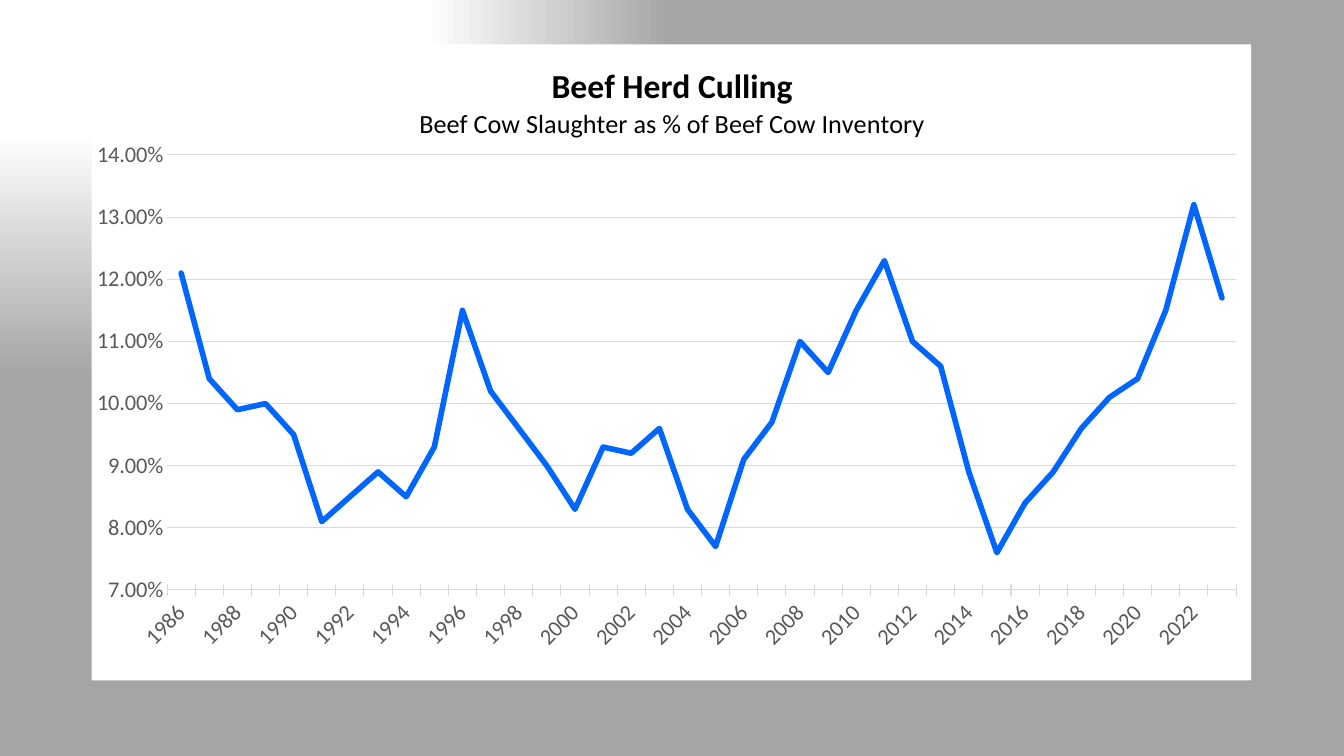
from dataclasses import dataclass

from pptx import Presentation
from pptx import util as u
from pptx.chart.data import CategoryChartData
from pptx.dml.color import RGBColor
from pptx.enum import chart as charts
from pptx.oxml import parse_xml
from pptx.oxml.ns import nsdecls

BLACK = RGBColor(0x00, 0x00, 0x00)
WHITE = RGBColor(0xFF, 0xFF, 0xFF)
GREY = RGBColor(0xA5, 0xA5, 0xA5)
LABEL_GREY = RGBColor(0x59, 0x59, 0x59)
GRID_GREY = RGBColor(0xD9, 0xD9, 0xD9)
BLUE = RGBColor(0x00, 0x66, 0xFF)
FONT = "Calibri"

FIRST_YEAR = 1986
CULLING_SHARES = [
    0.121, 0.104, 0.099, 0.1, 0.095, 0.081, 0.085, 0.089, 0.085, 0.093,
    0.115, 0.102, 0.096, 0.09, 0.083, 0.093, 0.092, 0.096, 0.083, 0.077,
    0.091, 0.097, 0.11, 0.105, 0.115, 0.123, 0.11, 0.106, 0.089, 0.076,
    0.084, 0.089, 0.096, 0.101, 0.104, 0.115, 0.132, 0.117,
]


@dataclass(frozen=True)
class TitleLine:
    wording: str
    size: float
    bold: bool


TITLE_LINES = [
    TitleLine("Beef Herd Culling", 24, True),
    TitleLine("Beef Cow Slaughter as % of Beef Cow Inventory", 18.7, False),
]


def style_font(font, size: float, color: RGBColor, bold: bool = False) -> None:
    for name, value in {"name": FONT, "size": u.Pt(size), "bold": bold}.items():
        setattr(font, name, value)
    font.color.rgb = color


def style_line(line, color: RGBColor, width: float) -> None:
    line.color.rgb = color
    line.width = u.Pt(width)


def manual_layout(inner: bool = False, **fractions: float):
    """Layout element with places given as fractions of the chart."""
    target = '<c:layoutTarget val="inner"/>' if inner else ""
    modes = "".join(f'<c:{side}Mode val="edge"/>' for side in "xy")
    places = "".join(f'<c:{k} val="{v}"/>' for k, v in fractions.items())
    return parse_xml(
        f'<c:layout {nsdecls("c")}><c:manualLayout>{target}{modes}{places}'
        "</c:manualLayout></c:layout>"
    )


def replace_layout(parent, layout, position: int) -> None:
    for old in parent.findall(layout.tag):
        parent.remove(old)
    parent.insert(position, layout)


def paint_background(slide) -> None:
    """Gradient that spreads from the top left corner."""
    stops = "".join(
        f'<a:gs pos="{percent * 1000}"><a:srgbClr val="{color}"/></a:gs>'
        for percent, color in [(0, WHITE), (35, WHITE), (100, GREY)]
    )
    fill = slide.background.fill
    fill.gradient()
    properties = slide.element.cSld.bg.bgPr
    gradient = parse_xml(
        f'<a:gradFill {nsdecls("a")} rotWithShape="1"><a:gsLst>{stops}</a:gsLst>'
        '<a:path path="rect"><a:fillToRect r="100000" b="100000"/></a:path>'
        "</a:gradFill>"
    )
    properties.replace(properties[0], gradient)


def write_title(chart) -> None:
    frame = chart.chart_title.text_frame
    for index, line in enumerate(TITLE_LINES):
        paragraph = frame.add_paragraph() if index else frame.paragraphs[0]
        run = paragraph.add_run()
        run.text = line.wording
        style_font(run.font, line.size, BLACK, line.bold)
    chart.chart_title.include_in_layout = False
    replace_layout(chart.chart_title._element, manual_layout(x=0.28, y=0.028), 1)


def style_axes(chart) -> None:
    years, shares = chart.category_axis, chart.value_axis
    formats = {
        years: {"major_tick_mark": charts.XL_TICK_MARK.CROSS,
                "has_major_gridlines": False},
        shares: {"major_tick_mark": charts.XL_TICK_MARK.NONE,
                 "has_major_gridlines": True, "minimum_scale": 0.07,
                 "maximum_scale": 0.14, "major_unit": 0.01},
    }
    for axis, values in formats.items():
        for name, value in values.items():
            setattr(axis, name, value)
        style_font(axis.tick_labels.font, 16, LABEL_GREY)
    style_line(years.format.line, GRID_GREY, 0.75)
    style_line(shares.major_gridlines.format.line, GRID_GREY, 0.75)
    shares.format.line.fill.background()
    shares.tick_labels.number_format = "0.00%"
    shares.tick_labels.number_format_is_linked = False
    years._element.txPr.bodyPr.set("rot", "-2700000")


def add_culling_chart(slide) -> None:
    data = CategoryChartData(number_format="0.00%")
    data.categories = [str(FIRST_YEAR + i) for i in range(len(CULLING_SHARES))]
    data.add_series("Series 1", CULLING_SHARES)
    chart = slide.shapes.add_chart(
        charts.XL_CHART_TYPE.LINE, u.Inches(0.91), u.Inches(0.44),
        u.Inches(11.5), u.Inches(6.31), data,
    ).chart
    chart.has_legend = False
    style_font(chart.font, 10, BLACK)
    write_title(chart)
    style_axes(chart)

    plot = chart.plots[0]
    plot.vary_by_categories = False
    culling = plot.series[0]
    culling.smooth = False
    culling.marker.style = charts.XL_MARKER_STYLE.NONE
    style_line(culling.format.line, BLUE, 4)
    culling.format.line._ln.set("cap", "rnd")

    space = chart._chartSpace
    replace_layout(
        space.chart.plotArea,
        manual_layout(inner=True, x=0.065, y=0.174, w=0.922, h=0.684), 0,
    )
    space.chart.addnext(parse_xml(
        f'<c:spPr {nsdecls("c", "a")}><a:solidFill><a:srgbClr val="{WHITE}"/>'
        "</a:solidFill><a:ln><a:noFill/></a:ln></c:spPr>"
    ))


def main() -> None:
    deck = Presentation()
    deck.slide_width, deck.slide_height = u.Inches(13.33), u.Inches(7.5)
    slide = deck.slides.add_slide(deck.slide_layouts[6])
    paint_background(slide)
    add_culling_chart(slide)
    deck.save("out.pptx")


if __name__ == "__main__":
    main()
